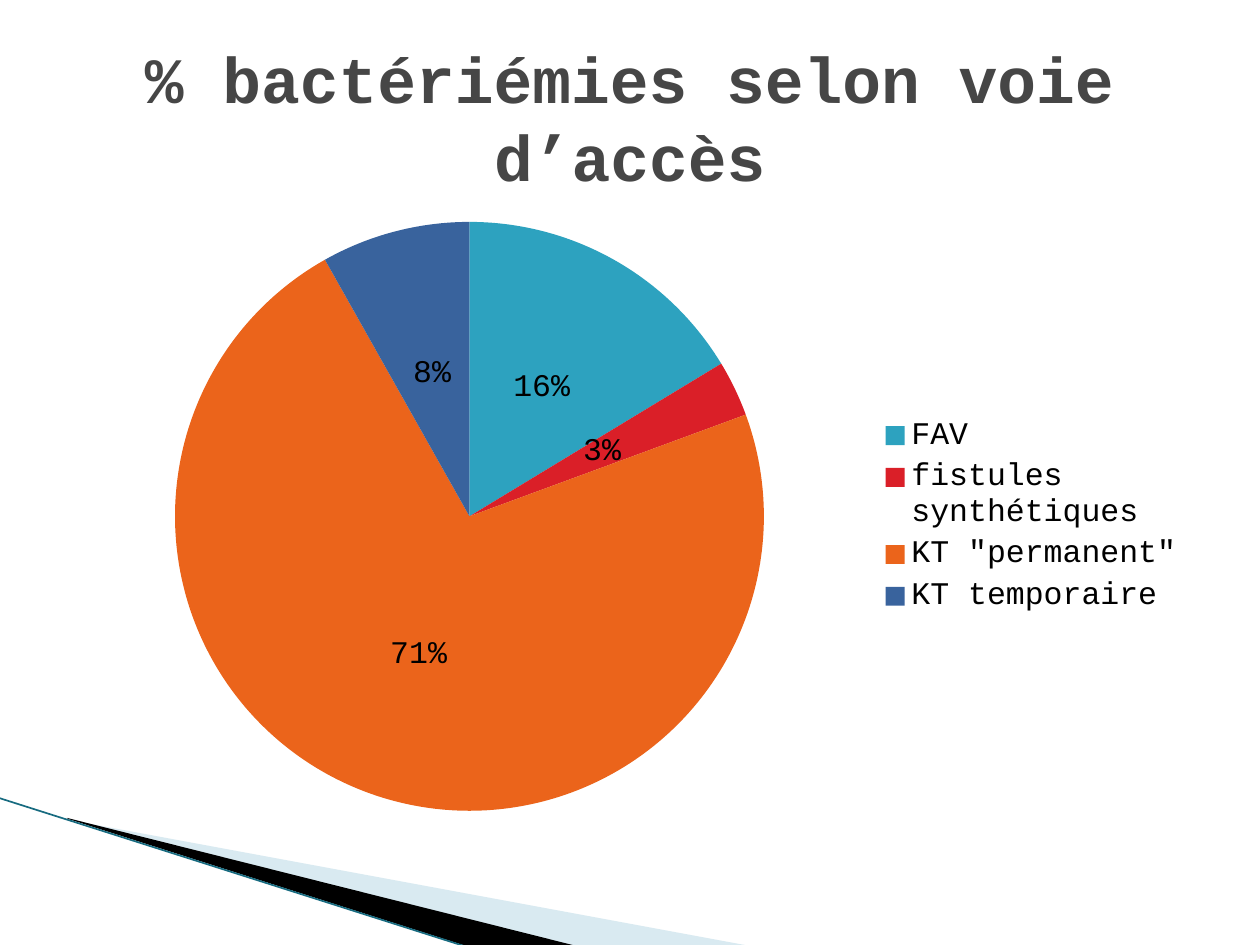
import pptx
import pptx.chart.data
import pptx.dml.color
import pptx.enum.chart
import pptx.enum.shapes
import pptx.enum.text
import pptx.oxml
import pptx.oxml.ns
import pptx.util

PX = 914400 // 126
FONT = "Courier New"
TITLE = "% bactériémies selon voie d’accès"
ACCESS_ROUTES = [
    ("FAV", 0.16, "2DA2BF"),
    ("fistules synthétiques", 0.03, "DA1F28"),
    ('KT "permanent"', 0.71, "EB641B"),
    ("KT temporaire", 0.08, "39639D"),
]
WEDGES = [
    ((98, 689, 524, 199), [(69, 820), (750, 946), (575, 946), (69, 819)], "A0CBDC", 40),
    ((-8, 798, 524, 116), [(67, 818), (576, 946), (469, 947), (68, 819)], "000000", 100),
]
EDGE = (-1, 798, 467, 947)
TITLE_BOX = (63, 38, 1134, 157)
CHART_BOX = (63, 204, 1134, 624)
PIE_BOX = (175, 222, 589, 589)


def emu(lengths):
    return [length * PX for length in lengths]


def rgb(colour):
    return pptx.dml.color.RGBColor.from_string(colour)


def paint(fill, colour):
    fill.solid()
    fill.fore_color.rgb = rgb(colour)


def style(font, size, colour):
    font.name = FONT
    font.size = pptx.util.Pt(size)
    font.color.rgb = rgb(colour)


def set_frame(wedge, frame, points):
    left, top, width, height = frame
    shift_x = min(x for x, _ in points) - left
    shift_y = min(y for _, y in points) - top
    outline = wedge._element.spPr.find(".//" + pptx.oxml.ns.qn("a:path"))
    outline.set("w", str(width))
    outline.set("h", str(height))
    for point in outline.iter(pptx.oxml.ns.qn("a:pt")):
        point.set("x", str(int(point.get("x")) + shift_x))
        point.set("y", str(int(point.get("y")) + shift_y))
    wedge.left, wedge.top, wedge.width, wedge.height = emu(frame)


def add_wedge(slide, frame, points, colour, opacity):
    outline = slide.shapes.build_freeform(*points[0], scale=PX)
    outline.add_line_segments(points[1:], close=True)
    wedge = outline.convert_to_shape()
    set_frame(wedge, frame, points)
    wedge.shadow.inherit = False
    paint(wedge.fill, colour)
    wedge.line.fill.background()
    if opacity < 100:
        tint = wedge._element.spPr.find(".//" + pptx.oxml.ns.qn("a:srgbClr"))
        alpha = tint.makeelement(pptx.oxml.ns.qn("a:alpha"), {"val": str(opacity * 1000)})
        tint.append(alpha)


def add_edge(slide):
    edge = slide.shapes.add_connector(
        pptx.enum.shapes.MSO_CONNECTOR.STRAIGHT, *emu(EDGE))
    edge.line.color.rgb = rgb("176B80")
    edge.line.width = pptx.util.Pt(0.95)
    properties = edge._element.spPr
    properties.append(properties.makeelement(pptx.oxml.ns.qn("a:effectLst"), {}))


def place_pie(chart):
    left, top, width, height = CHART_BOX
    x, y, w, h = PIE_BOX
    fractions = {"x": (x - left) / width, "y": (y - top) / height,
                 "w": w / width, "h": h / height}
    entries = '<c:layoutTarget val="inner"/><c:xMode val="edge"/><c:yMode val="edge"/>'
    entries += "".join(f'<c:{key} val="{value:.4f}"/>' for key, value in fractions.items())
    layout = pptx.oxml.parse_xml(
        f'<c:layout {pptx.oxml.ns.nsdecls("c")}><c:manualLayout>{entries}'
        '</c:manualLayout></c:layout>')
    plot_area = chart._chartSpace.chart.plotArea
    for present in plot_area.findall(pptx.oxml.ns.qn("c:layout")):
        plot_area.remove(present)
    plot_area.insert(0, layout)


def add_pie(slide):
    shares = pptx.chart.data.CategoryChartData(number_format="0%")
    shares.categories = [name for name, _, _ in ACCESS_ROUTES]
    shares.add_series("Series 1", [share for _, share, _ in ACCESS_ROUTES])
    chart = slide.shapes.add_chart(
        pptx.enum.chart.XL_CHART_TYPE.PIE, *emu(CHART_BOX), shares).chart
    style(chart.font, 18, "000000")
    chart.has_title = False
    chart.has_legend = True
    chart.legend.position = pptx.enum.chart.XL_LEGEND_POSITION.RIGHT
    chart.legend.include_in_layout = False
    style(chart.legend.font, 18, "000000")
    pie = chart.plots[0]
    pie.vary_by_categories = True
    for index, (_, _, colour) in enumerate(ACCESS_ROUTES):
        paint(pie.series[0].points[index].format.fill, colour)
    pie.has_data_labels = True
    labels = pie.data_labels
    labels.show_value = True
    labels.show_percentage = False
    labels.number_format = "0%"
    labels.number_format_is_linked = False
    labels.position = pptx.enum.chart.XL_LABEL_POSITION.CENTER
    style(labels.font, 18, "000000")
    place_pie(chart)


def write_title(slide):
    title = slide.shapes.title
    title.left, title.top, title.width, title.height = emu(TITLE_BOX)
    frame = title.text_frame
    frame.word_wrap = True
    frame.auto_size = pptx.enum.text.MSO_AUTO_SIZE.NONE
    frame.vertical_anchor = pptx.enum.text.MSO_ANCHOR.MIDDLE
    heading = frame.paragraphs[0]
    heading.alignment = pptx.enum.text.PP_ALIGN.CENTER
    run = heading.add_run()
    run.text = TITLE
    style(run.font, 36.9, "464646")
    run.font.bold = True


def main():
    deck = pptx.Presentation()
    deck.slide_width, deck.slide_height = emu((1260, 945))
    slide = deck.slides.add_slide(deck.slide_layouts[5])
    paint(slide.background.fill, "FFFFFF")
    for frame, points, colour, opacity in WEDGES:
        add_wedge(slide, frame, points, colour, opacity)
    add_edge(slide)
    add_pie(slide)
    write_title(slide)
    deck.save("out.pptx")


if __name__ == "__main__":
    main()
